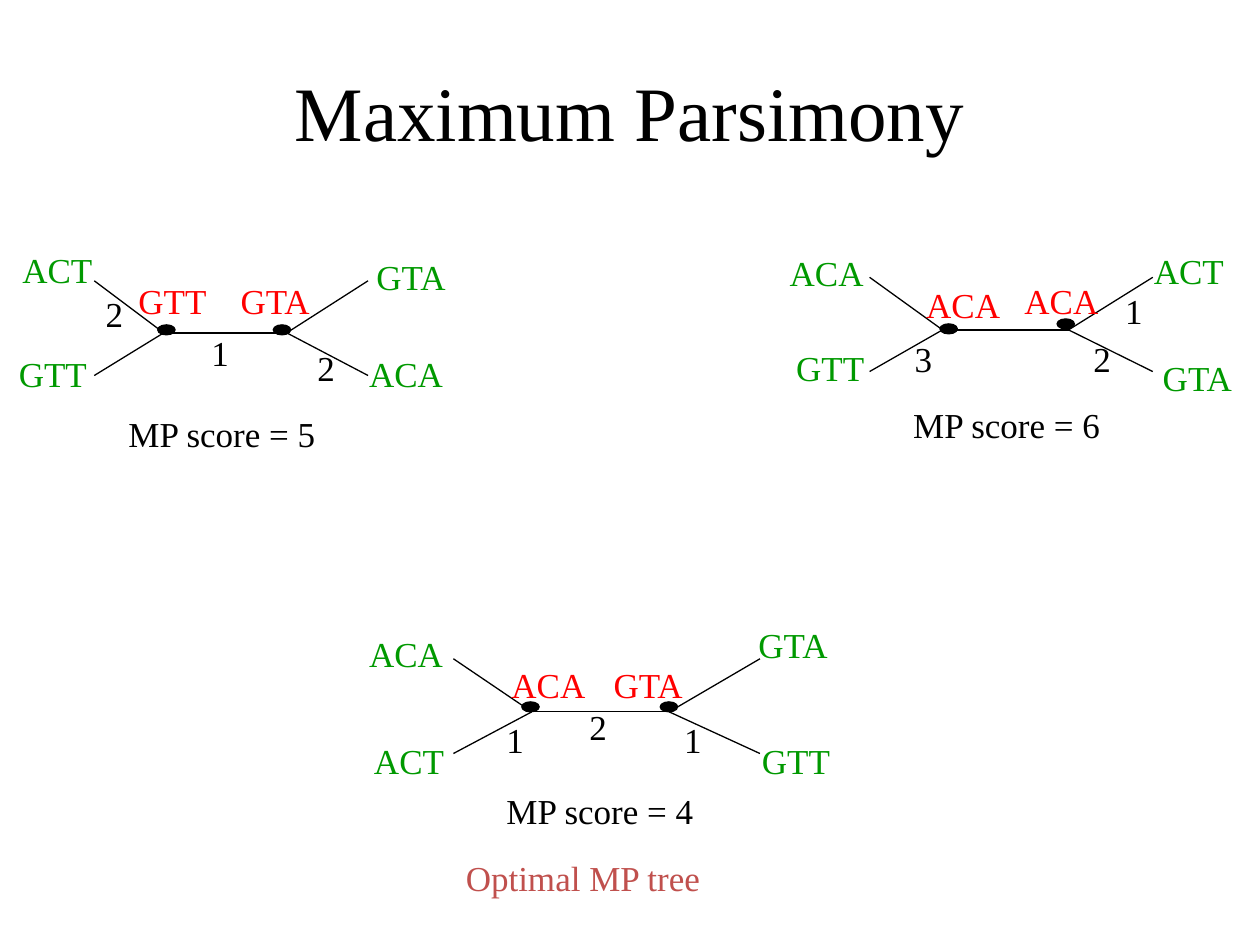
from pptx import Presentation
from pptx.dml.color import RGBColor
from pptx.enum.shapes import MSO_CONNECTOR as Link, MSO_SHAPE as Form
from pptx.enum.text import MSO_ANCHOR as Anchor, MSO_AUTO_SIZE as Fit, PP_ALIGN as Align
from pptx.oxml.ns import qn
from pptx.util import Cm, Pt
from lxml.etree import SubElement

COLORS = {"ink": "000000", "leaf": "009900", "node": "FF0000", "best": "C0504D"}
# Text box widths in cm; any other text is a one-digit edge cost
WIDTHS = {"ACT": 1.93, "GTT": 1.88, "GTA": 1.96, "ACA": 2.01,
          "MP score = 5": 4.29, "MP score = 6": 4.29, "MP score = 4": 4.29,
          "Optimal MP tree": 5.26}

# Lengths in cm. ends: outer left, inner left, inner right, outer right;
# rows: top, middle, bottom
TREES = [
    {"ends": (1.9, 3.3, 5.78, 7.42), "rows": (5.66, 6.71, 7.57),
     "dots": [(3.18, 6.55), (5.51, 6.55)],
     "leaf": [("ACT", 0.2, 4.88), ("GTT", 0.13, 6.99),
              ("GTA", 7.34, 5.03), ("ACA", 7.19, 6.99)],
     "node": [("GTT", 2.54, 5.51), ("GTA", 4.6, 5.51)],
     "ink": [("2", 1.88, 5.77), ("1", 4.01, 6.55), ("2", 6.15, 6.86),
             ("MP score = 5", 2.34, 8.2)]},
    {"ends": (17.53, 19, 21.54, 23.24), "rows": (5.59, 6.65, 7.49),
     "dots": [(18.95, 6.53), (21.31, 6.43)],
     "leaf": [("ACA", 15.67, 4.95), ("GTT", 15.8, 6.86),
              ("ACT", 23.01, 4.9), ("GTA", 23.19, 7.06)],
     "node": [("ACA", 18.42, 5.59), ("ACA", 20.4, 5.51)],
     "ink": [("3", 18.19, 6.68), ("1", 22.43, 5.72), ("2", 21.79, 6.68),
             ("MP score = 6", 18.16, 8)]},
    {"ends": (9.14, 10.72, 13.49, 15.32), "rows": (13.28, 14.35, 15.19),
     "dots": [(10.52, 14.15), (13.31, 14.15)],
     "leaf": [("ACA", 7.19, 12.62), ("ACT", 7.29, 14.78),
              ("GTA", 15.04, 12.45), ("GTT", 15.11, 14.78)],
     "node": [("ACA", 10.06, 13.26), ("GTA", 12.12, 13.26)],
     "ink": [("1", 9.96, 14.35), ("2", 11.63, 14.1), ("1", 13.54, 14.35),
             ("MP score = 4", 9.96, 15.8)]},
]


class Sketch:
    face = "Times New Roman"
    thin = Pt(0.75)

    def __init__(self, slide):
        self.slide = slide
        self.shapes = slide.shapes

    def color(self, name):
        return RGBColor.from_string(COLORS[name])

    def style(self, para, size, name):
        para.font.name = self.face
        para.font.size = Pt(size)
        para.font.color.rgb = self.color(name)

    def title(self, text, x, y, w, h):
        box = self.shapes.title
        box.left, box.top, box.width, box.height = Cm(x), Cm(y), Cm(w), Cm(h)
        box.text_frame.text = text
        box.text_frame.vertical_anchor = Anchor.MIDDLE
        para = box.text_frame.paragraphs[0]
        para.alignment = Align.CENTER
        self.style(para, 44, "ink")

    def label(self, text, x, y, name):
        wide = WIDTHS.get(text, 0.86)
        frame = self.shapes.add_textbox(Cm(x), Cm(y), Cm(wide), Cm(1.09)).text_frame
        frame.word_wrap = False
        frame.auto_size = Fit.SHAPE_TO_FIT_TEXT
        frame.text = text
        self.style(frame.paragraphs[0], 20, name)

    def line(self, x1, y1, x2, y2):
        link = self.shapes.add_connector(Link.STRAIGHT, Cm(x1), Cm(y1), Cm(x2), Cm(y2))
        link.line.color.rgb = self.color("ink")
        link.line.width = self.thin
        SubElement(link._element.spPr, qn("a:effectLst"))

    def dot(self, x, y):
        spot = self.shapes.add_shape(Form.OVAL, Cm(x), Cm(y), Cm(0.35), Cm(0.2))
        spot.shadow.inherit = False
        spot.fill.solid()
        spot.fill.fore_color.rgb = self.color("ink")
        spot.line.color.rgb = self.color("ink")
        spot.line.width = self.thin

    def tree(self, data):
        far_l, left, right, far_r = data["ends"]
        top, mid, low = data["rows"]
        # Branches
        self.line(left, mid, right, mid)
        for start, end in ((left, far_l), (right, far_r)):
            for row in (top, low):
                self.line(start, mid, end, row)
        # Inner nodes
        for spot in data["dots"]:
            self.dot(*spot)
        # Sequences, edge costs and score
        for name in ("leaf", "node", "ink"):
            for text, x, y in data[name]:
                self.label(text, x, y, name)


def main():
    deck = Presentation()
    deck.slide_width, deck.slide_height = Cm(25.4), Cm(19.05)
    sketch = Sketch(deck.slides.add_slide(deck.slide_layouts[5]))
    sketch.title("Maximum Parsimony", 1.9, 0.64, 21.59, 3.18)
    for data in TREES:
        sketch.tree(data)
    # Verdict under the last tree
    sketch.label("Optimal MP tree", 9.14, 17.15, "best")
    deck.save("out.pptx")


if __name__ == "__main__":
    main()
